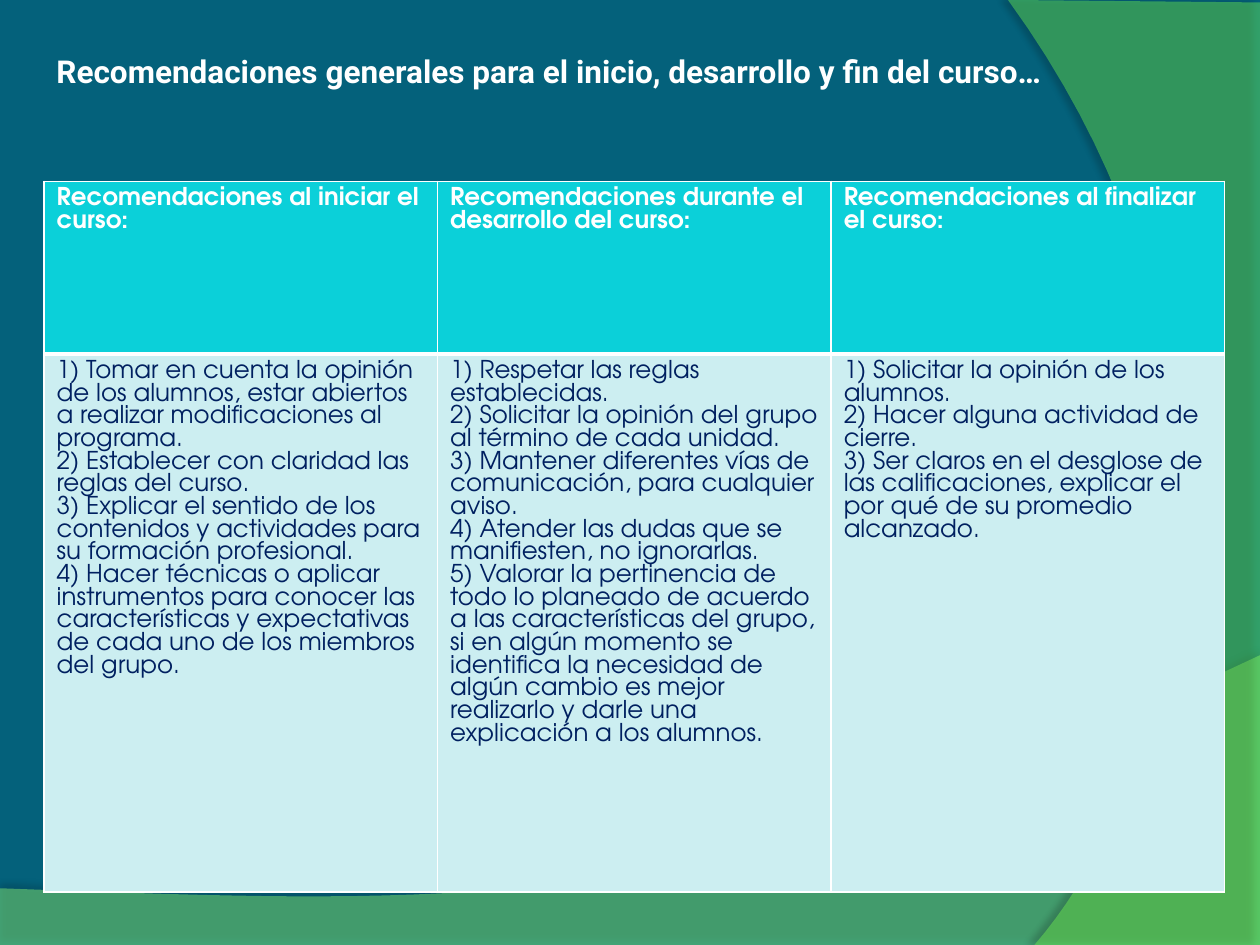
from pptx import Presentation
from pptx import util as u
from pptx.dml.color import RGBColor
from pptx.enum import text
from pptx.oxml import parse_xml
from pptx.oxml.ns import nsdecls, qn

COLUMNS, ROWS = 100, 75
HEADINGS = [
    "Recomendaciones al iniciar el curso:",
    "Recomendaciones durante el desarrollo del curso:",
    "Recomendaciones al finalizar el curso:",
]
ADVICE = [
    [
        "1) Tomar en cuenta la opinión de los alumnos, estar abiertos a realizar modificaciones al programa.",
        "2) Establecer con claridad las reglas del curso.",
        "3) Explicar el sentido de los contenidos y actividades para su formación profesional.",
        "4) Hacer técnicas o aplicar instrumentos para conocer las características y expectativas "
        "de cada uno de los miembros del grupo.",
    ],
    [
        "1) Respetar las reglas establecidas.",
        "2) Solicitar la opinión del grupo al término de cada unidad.",
        "3) Mantener diferentes vías de comunicación, para cualquier aviso.",
        "4) Atender las dudas que se manifiesten, no ignorarlas.",
        "5) Valorar la pertinencia de todo lo planeado de acuerdo a las características del grupo, "
        "si en algún momento se identifica la necesidad de algún cambio es mejor realizarlo y darle "
        "una explicación a los alumnos.",
    ],
    [
        "1) Solicitar la opinión de los alumnos.",
        "2) Hacer alguna actividad de cierre.",
        "3) Ser claros en el desglose de las calificaciones, explicar el por qué de su promedio alcanzado.",
    ],
]


def color(value):
    return RGBColor.from_string(value)


def bezier(start, first, second, end, steps=40):
    """Return points along a cubic curve, both ends included."""
    points = []
    for step in range(steps + 1):
        t = step / steps
        weights = ((1 - t) ** 3, 3 * t * (1 - t) ** 2, 3 * t * t * (1 - t), t ** 3)
        points.append(tuple(
            sum(weight * value for weight, value in zip(weights, axis))
            for axis in zip(start, first, second, end)
        ))
    return points


class Deck:
    """Holds the style and the current slide, measured on a grid of 100 by 75."""

    title_font, table_font = "Roboto", "TeX Gyre Adventor"
    white, navy, cyan, pale, background = "FFFFFF", "002060", "0BD0D9", "CCEEF1", "04617B"

    def __init__(self):
        self.presentation = Presentation()
        self.presentation.slide_width = u.Inches(10)
        self.presentation.slide_height = u.Inches(7.5)
        self.slide = self.presentation.slides.add_slide(self.presentation.slide_layouts[6])
        fill = self.slide.background.fill
        fill.solid()
        fill.fore_color.rgb = color(self.background)

    def x(self, columns):
        return round(self.presentation.slide_width * columns / COLUMNS)

    def y(self, rows):
        return round(self.presentation.slide_height * rows / ROWS)

    def box(self, left, top, width, height):
        return self.x(left), self.y(top), self.x(width), self.y(height)

    def style(self, paragraph, name, size, value, bold):
        font = paragraph.font
        font.name, font.size, font.bold = name, u.Pt(size), bold
        font.color.rgb = color(value)

    def wave(self, points, fill, opacity, shadow_opacity, distance, direction):
        """Draw a translucent outline with a soft shadow."""
        corners = [(self.x(column), self.y(row)) for column, row in points]
        builder = self.slide.shapes.build_freeform(*corners[0])
        builder.add_line_segments(corners[1:], close=True)
        shape = builder.convert_to_shape()
        shape.fill.solid()
        shape.fill.fore_color.rgb = color(fill)
        shape.line.fill.background()
        properties = shape._element.spPr
        tint = properties.find(qn("a:solidFill")).find(qn("a:srgbClr"))
        tint.append(parse_xml(f'<a:alpha {nsdecls("a")} val="{opacity * 1000}"/>'))
        properties.append(parse_xml(
            f'<a:effectLst {nsdecls("a")}><a:outerShdw blurRad="{u.Pt(4)}" dist="{u.Pt(distance)}" '
            f'dir="{direction * 60000}" algn="ctr" rotWithShape="0"><a:srgbClr val="000000">'
            f'<a:alpha val="{shadow_opacity * 1000}"/></a:srgbClr></a:outerShdw></a:effectLst>'
        ))

    def title(self, words, *place):
        frame = self.slide.shapes.add_textbox(*self.box(*place)).text_frame
        frame.word_wrap = True
        frame.text = words
        self.style(frame.paragraphs[0], self.title_font, 18, self.white, True)

    def cell(self, cell, lines, fill, value, bold, bottom):
        """Fill one table cell and draw its four borders."""
        cell.fill.solid()
        cell.fill.fore_color.rgb = color(fill)
        cell.vertical_anchor = text.MSO_ANCHOR.TOP
        cell.text = "\n".join(lines)
        for paragraph in cell.text_frame.paragraphs:
            paragraph.line_spacing = u.Pt(12.95)
            self.style(paragraph, self.table_font, 14, value, bold)
        properties = cell._tc.get_or_add_tcPr()
        for index, (side, width) in enumerate(zip("LRTB", (1, 1, 1, bottom))):
            properties.insert(index, parse_xml(
                f'<a:ln{side} {nsdecls("a")} w="{u.Pt(width)}"><a:solidFill>'
                f'<a:srgbClr val="{self.white}"/></a:solidFill></a:ln{side}>'
            ))

    def table(self, headings, bodies, heights, left, top, width):
        place = self.box(left, top, width, sum(heights))
        table = self.slide.shapes.add_table(2, len(headings), *place).table
        for row, height in zip(table.rows, heights):
            row.height = self.y(height)
        for index, (heading, body) in enumerate(zip(headings, bodies)):
            self.cell(table.cell(0, index), [heading], self.cyan, self.white, True, 3)
            self.cell(table.cell(1, index), body, self.pale, self.navy, False, 1)


def main():
    deck = Deck()
    bottom_curve = bezier((100, 52), (55.9, 72.9), (39.1, 71.9), (0, 70.5))
    right_curve = bezier((82.1, 75), (93.5, 61.9), (101.8, 30), (80, 0))
    deck.wave([(0, 75.1), (100, 75.1), *bottom_curve], "8FF774", 45, 35, 3.5, 270)
    deck.wave([(100, 0.2), (100, 75), *right_curve], "77FF50", 40, 45, 4, 180)
    deck.table(HEADINGS, ADVICE, (13.7, 42.7), 3.5, 14.4, 93.7)
    deck.title("Recomendaciones generales para el inicio, desarrollo y fin del curso…", 3.5, 3.6, 89, 7.1)
    deck.presentation.save("out.pptx")


if __name__ == "__main__":
    main()
